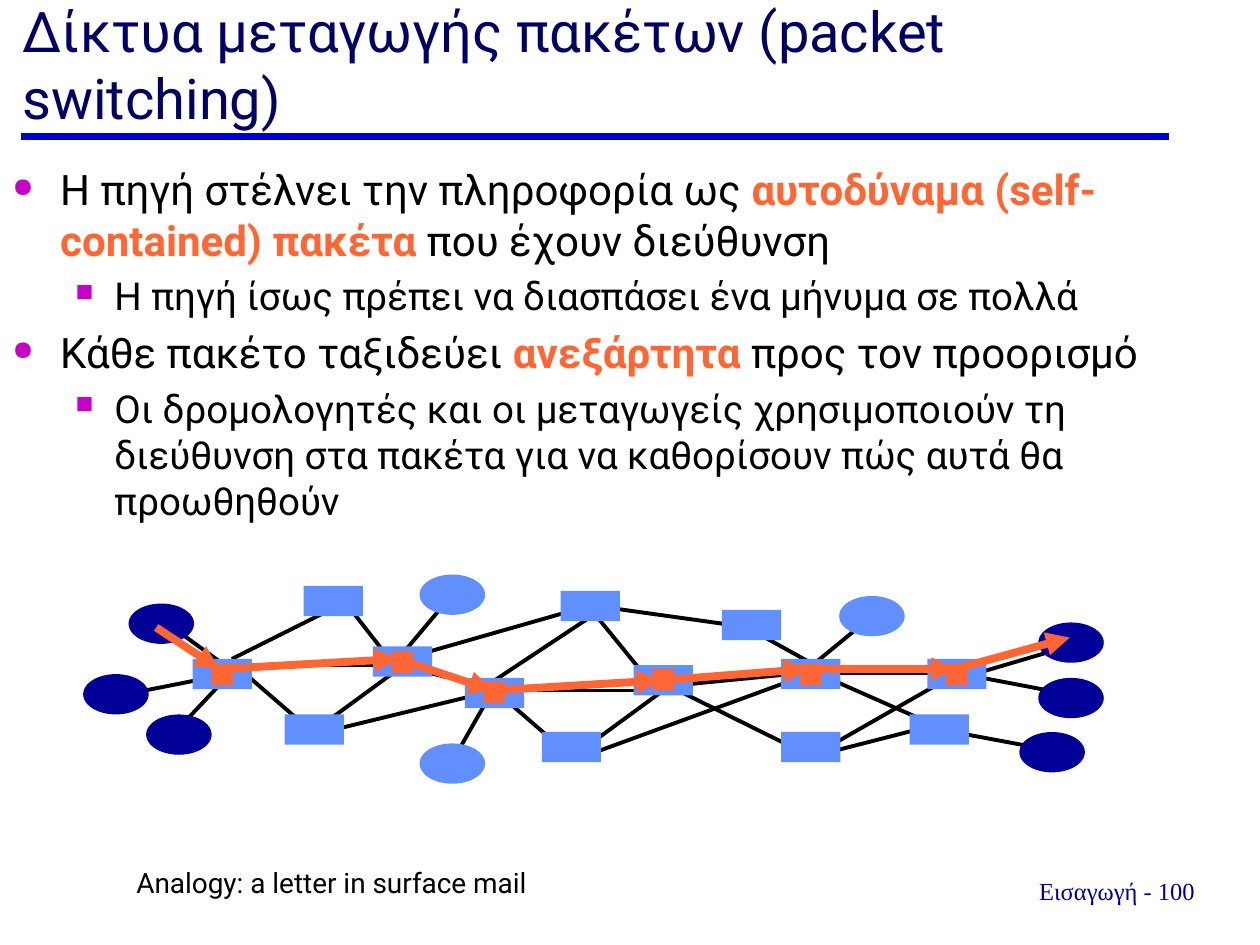
"""Build a slide on packet switching with a network diagram."""
from dataclasses import dataclass
from itertools import pairwise
from typing import NamedTuple

from lxml import etree
from pptx import Presentation
from pptx.dml.color import RGBColor
from pptx.enum.shapes import MSO_CONNECTOR, MSO_SHAPE
from pptx.enum.text import MSO_ANCHOR, PP_ALIGN
from pptx.oxml.ns import qn
from pptx.util import Inches, Pt

STRAIGHT = MSO_CONNECTOR.STRAIGHT
RECTANGLE, OVAL = MSO_SHAPE.RECTANGLE, MSO_SHAPE.OVAL
LEFT, CENTER, RIGHT = PP_ALIGN.LEFT, PP_ALIGN.CENTER, PP_ALIGN.RIGHT
TOP, BOTTOM = MSO_ANCHOR.TOP, MSO_ANCHOR.BOTTOM


@dataclass(frozen=True)
class Theme:
    sans: str = "Roboto"
    serif: str = "Times New Roman"
    title: str = "000066"
    rule: str = "0000CC"
    text: str = "000000"
    accent: str = "FF6633"
    bullet: str = "C700C7"
    host: str = "000099"
    node: str = "618FFD"
    title_size: float = 32
    point_size: float = 24
    detail_size: float = 22
    caption_size: float = 16
    footer_size: float = 14
    rule_width: float = 4
    link_width: float = 2.25
    route_width: float = 4.5


THEME = Theme()


class Point(NamedTuple):
    x: float
    y: float


class Span(NamedTuple):
    text: str
    color: str = THEME.text
    bold: bool = False


class Paragraph(NamedTuple):
    spans: list[Span]
    size: float
    font: str = THEME.sans
    align: PP_ALIGN = LEFT
    level: int | None = None


class Bullet(NamedTuple):
    char: str
    margin: float
    hanging: float


class NodeGroup(NamedTuple):
    kind: MSO_SHAPE
    width: float
    height: float
    color: str
    corners: list[tuple[float, float]]


BULLETS = [Bullet("●", 0.38, 0.38), Bullet("■", 0.81, 0.31)]

BODY = [
    Paragraph([Span("Η πηγή στέλνει την πληροφορία ως "),
               Span("αυτοδύναμα (self-contained) πακέτα ", THEME.accent, True),
               Span("που έχουν διεύθυνση")], THEME.point_size, level=0),
    Paragraph([Span("Η πηγή ίσως πρέπει να διασπάσει ένα μήνυμα σε πολλά")],
              THEME.detail_size, level=1),
    Paragraph([Span("Κάθε πακέτο ταξιδεύει "),
               Span("ανεξάρτητα ", THEME.accent, True),
               Span("προς τον προορισμό")], THEME.point_size, level=0),
    Paragraph([Span("Οι δρομολογητές και οι μεταγωγείς χρησιμοποιούν τη διεύθυνση "
                    "στα πακέτα για να καθορίσουν πώς αυτά θα προωθηθούν")],
              THEME.detail_size, level=1),
]

LINKS = [
    (3.58, 4.73, 3.16, 5.23), (3.91, 5.48, 3.58, 6.06), (6.91, 4.9, 6.41, 5.31),
    (7.46, 5.79, 8.32, 5.95), (7.73, 5.35, 8.41, 5.15), (7.64, 5.35, 8.53, 5.52),
    (3.94, 5.49, 4.54, 6.01), (5.17, 5.48, 4.01, 5.48), (5.25, 5.49, 4.54, 6.01),
    (4.56, 6.03, 6.45, 5.34), (6.5, 5.34, 7.62, 5.34), (6.5, 5.35, 7.45, 5.77),
    (6.5, 5.97, 7.62, 5.33), (6.58, 5.97, 7.36, 5.77), (4.74, 4.79, 3.13, 5.25),
    (1.44, 5.03, 1.77, 5.27), (1.88, 5.29, 1.39, 5.81), (5.91, 4.97, 6.56, 5.33),
    (4.59, 4.79, 6.02, 4.99), (1.88, 5.29, 2.48, 5.81), (3.11, 5.28, 1.95, 5.28),
    (3.19, 5.29, 2.48, 5.81), (3.19, 5.29, 3.87, 5.45), (2.49, 5.83, 4.05, 5.45),
    (1.84, 5.23, 2.74, 4.78), (3.88, 5.43, 4.68, 4.9), (1.86, 5.34, 0.95, 5.52),
    (4.71, 4.86, 5.19, 5.45), (5.18, 5.38, 6.45, 6.01), (2.74, 4.78, 3.13, 5.28),
    (5.36, 5.44, 6.48, 5.33),
]

ROUTE = [Point(1.24, 4.98), Point(1.74, 5.31), Point(3.16, 5.23), Point(3.91, 5.48),
         Point(5.24, 5.4), Point(6.41, 5.31), Point(7.58, 5.31), Point(8.49, 5.06)]

ROUTERS = NodeGroup(RECTANGLE, 0.47, 0.24, THEME.node, [
    (1.53, 5.23), (2.26, 5.67), (7.36, 5.23), (6.2, 5.23), (6.2, 5.81), (5.03, 5.28),
    (4.45, 4.69), (4.3, 5.81), (5.73, 4.84), (2.96, 5.13), (3.69, 5.38), (2.41, 4.65),
    (7.22, 5.67)])
END_HOSTS = NodeGroup(OVAL, 0.52, 0.32, THEME.host, [
    (8.09, 5.81), (8.24, 5.38), (8.24, 4.94), (1.16, 5.67), (0.66, 5.35), (1.02, 4.79)])
PACKETS = NodeGroup(RECTANGLE, 0.17, 0.17, THEME.accent, [
    (1.68, 5.27), (6.35, 5.27), (5.18, 5.31), (3.84, 5.41), (3.11, 5.17), (7.51, 5.27)])
INNER_HOSTS = NodeGroup(OVAL, 0.52, 0.32, THEME.node, [
    (3.33, 4.56), (3.33, 5.9), (6.66, 4.73)])


def add_line(page, start: Point, end: Point, color: str, width: float,
             arrow: bool = False) -> None:
    line = page.shapes.add_connector(STRAIGHT, *map(Inches, (*start, *end)))
    line.line.color.rgb = RGBColor.from_string(color)
    line.line.width = Pt(width)
    if arrow:
        etree.SubElement(line.line._get_or_add_ln(), qn("a:tailEnd"), type="triangle")
    etree.SubElement(line._element.spPr, qn("a:effectLst"))


def add_nodes(page, group: NodeGroup) -> None:
    for left, top in group.corners:
        node = page.shapes.add_shape(
            group.kind, *map(Inches, (left, top, group.width, group.height)))
        node.shadow.inherit = False
        node.fill.solid()
        node.fill.fore_color.rgb = RGBColor.from_string(group.color)
        node.line.fill.background()


def add_bullet(para, level: int, size: float) -> None:
    bullet = BULLETS[level]
    para.level = level
    para.space_before = Pt(size * 0.2)
    properties = para._p.get_or_add_pPr()
    properties.set("marL", str(Inches(bullet.margin)))
    properties.set("indent", str(-Inches(bullet.hanging)))
    color = etree.SubElement(properties, qn("a:buClr"))
    etree.SubElement(color, qn("a:srgbClr"), val=THEME.bullet)
    etree.SubElement(properties, qn("a:buSzPct"), val="64000")
    etree.SubElement(properties, qn("a:buChar"), char=bullet.char)


def add_text(page, place: tuple[float, float, float, float], paragraphs: list[Paragraph],
             anchor: MSO_ANCHOR = TOP, wrap: bool = True) -> None:
    frame = page.shapes.add_textbox(*map(Inches, place)).text_frame
    frame.word_wrap = wrap
    frame.vertical_anchor = anchor
    for index, item in enumerate(paragraphs):
        para = frame.add_paragraph() if index else frame.paragraphs[0]
        para.alignment = item.align
        if item.level is not None:
            add_bullet(para, item.level, item.size)
        for span in item.spans:
            run = para.add_run()
            run.text = span.text
            values = {"name": item.font, "size": Pt(item.size), "bold": span.bold}
            for name, value in values.items():
                setattr(run.font, name, value)
            run.font.color.rgb = RGBColor.from_string(span.color)


def main() -> None:
    deck = Presentation()
    deck.slide_width, deck.slide_height = Inches(10), Inches(7.5)
    page = deck.slides.add_slide(deck.slide_layouts[6])

    add_line(page, Point(0.17, 1.08), Point(9.28, 1.08), THEME.rule, THEME.rule_width)
    add_text(page, (7.99, 6.9, 1.75, 0.33), [Paragraph(
        [Span(" Εισαγωγή - 100 ", THEME.host)], THEME.footer_size, THEME.serif, CENTER)])
    add_text(page, (0.08, 0.25, 9.67, 0.84), [Paragraph(
        [Span("Δίκτυα μεταγωγής πακέτων (packet switching)", THEME.title)],
        THEME.title_size)], BOTTOM)
    add_text(page, (0, 1.25, 10, 5.08), BODY)

    for x1, y1, x2, y2 in LINKS:
        add_line(page, Point(x1, y1), Point(x2, y2), THEME.text, THEME.link_width)
    for group in (ROUTERS, END_HOSTS, PACKETS):
        add_nodes(page, group)
    for start, end in pairwise(ROUTE):
        add_line(page, start, end, THEME.accent, THEME.route_width, arrow=True)
    add_nodes(page, INNER_HOSTS)
    add_text(page, (0.98, 6.82, 3.3, 0.37), [Paragraph(
        [Span("Analogy: a letter in surface mail")], THEME.caption_size, align=RIGHT)],
        wrap=False)

    deck.save("out.pptx")


if __name__ == "__main__":
    main()
